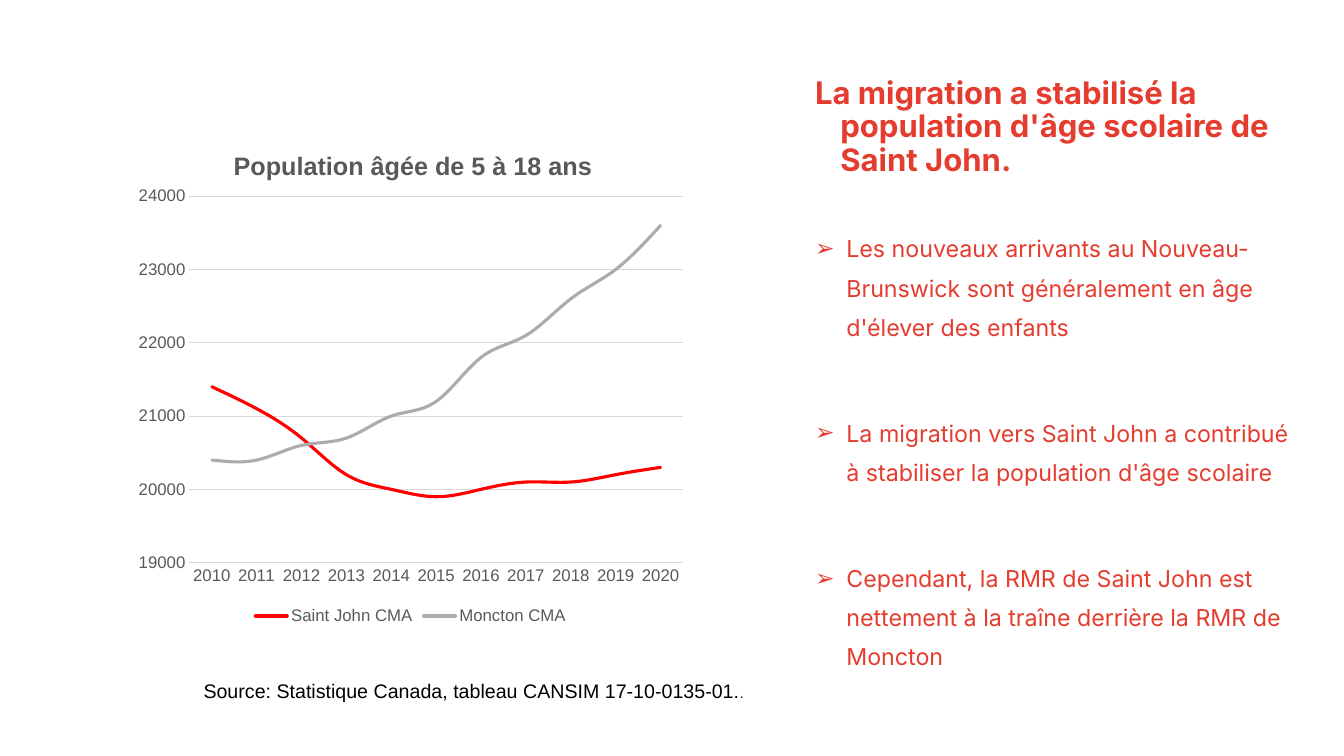
from dataclasses import dataclass

import lxml.etree as etree
import pptx
import pptx.chart.data
import pptx.dml.color
import pptx.enum.chart
import pptx.oxml.ns
import pptx.util

Cm, Pt = pptx.util.Cm, pptx.util.Pt
RGB = pptx.dml.color.RGBColor
qn = pptx.oxml.ns.qn

RED = RGB(0xE4, 0x3D, 0x30)
BLACK = RGB(0, 0, 0)
GREY = RGB(0x59, 0x59, 0x59)
GRID = RGB(0xD9, 0xD9, 0xD9)


@dataclass
class Box:
    """Place on the slide, in centimetres."""
    left: float
    top: float
    width: float
    height: float

    def emu(self) -> list:
        return [Cm(n) for n in (self.left, self.top, self.width, self.height)]


@dataclass
class Style:
    """Look of the paragraphs in one text box."""
    size: float
    face: str
    color: RGB
    bold: bool = False
    left: float = 0
    hang: float = 0
    line: float = 1.0
    gap: float = 0
    mark: str = ""


@dataclass
class Line:
    name: str
    color: RGB
    vals: list


HEAD = "La migration a stabilisé la population d'âge scolaire de Saint John."
POINTS = [
    "Les nouveaux arrivants au Nouveau-Brunswick sont généralement en âge d'élever des enfants",
    "La migration vers Saint John a contribué à stabiliser la population d'âge scolaire",
    "Cependant, la RMR de Saint John est nettement à la traîne derrière la RMR de Moncton",
]
SOURCE = "Source: Statistique Canada, tableau CANSIM 17-10-0135-01."
YEARS = [str(year) for year in range(2010, 2021)]
LINES = [
    Line("Saint John CMA", RGB(0xFF, 0, 0),
         [21400, 21100, 20700, 20200, 20000, 19900, 20000, 20100, 20100, 20200, 20300]),
    Line("Moncton CMA", RGB(0xAF, 0xAB, 0xAB),
         [20400, 20400, 20600, 20700, 21000, 21200, 21800, 22100, 22600, 23000, 23600]),
]


def paint(font, size: float, face: str, color: RGB, bold: bool = False) -> None:
    font.size, font.name, font.bold = Pt(size), face, bold
    font.color.rgb = color


def indent(para, style: Style) -> None:
    """Set the hanging indent and the bullet, if any."""
    props = para._p.get_or_add_pPr()
    props.set("marL", str(Cm(style.left)))
    props.set("indent", str(Cm(style.hang)))
    if style.mark:
        tint = etree.SubElement(props, qn("a:buClr"))
        etree.SubElement(tint, qn("a:srgbClr"), val=str(style.color))
        etree.SubElement(props, qn("a:buFont"), typeface="Arial")
        etree.SubElement(props, qn("a:buChar"), char=style.mark)


def write(slide, box: Box, texts: list, style: Style):
    """Add a text box with one paragraph per text."""
    frame = slide.shapes.add_textbox(*box.emu()).text_frame
    frame.word_wrap = True
    frame.text = "\n".join(texts)
    for rank, para in enumerate(frame.paragraphs):
        indent(para, style)
        para.line_spacing = style.line
        if rank:
            para.space_before = Pt(style.gap)
        for run in para.runs:
            paint(run.font, style.size, style.face, style.color, style.bold)
    return frame


def place(parent, after, **spots: float) -> None:
    """Put a manual chart layout behind the given child of parent."""
    for old in parent.findall(qn("c:layout")):
        parent.remove(old)
    layout = etree.Element(qn("c:layout"))
    manual = etree.SubElement(layout, qn("c:manualLayout"))
    if "w" in spots:
        etree.SubElement(manual, qn("c:layoutTarget"), val="inner")
    for key in ("x", "y"):
        etree.SubElement(manual, qn(f"c:{key}Mode"), val="edge")
    for key, spot in spots.items():
        etree.SubElement(manual, qn(f"c:{key}"), val=str(spot))
    if after is None:
        parent.insert(0, layout)
    else:
        after.addnext(layout)


def plot(slide, box: Box) -> None:
    data = pptx.chart.data.CategoryChartData(number_format="General")
    data.categories = YEARS
    for line in LINES:
        data.add_series(line.name, line.vals)
    kinds = pptx.enum.chart
    chart = slide.shapes.add_chart(kinds.XL_CHART_TYPE.LINE, *box.emu(), data).chart
    paint(chart.font, 12, "Arial", GREY)

    chart.has_title = True
    title = chart.chart_title
    title.text_frame.text = "Population âgée de 5 à 18 ans"
    paint(title.text_frame.paragraphs[0].runs[0].font, 18, "Arial", GREY, True)
    root = title._element
    place(root, root.find(qn("c:tx")), x=0.18, y=0.05)
    place(chart._chartSpace.chart.plotArea, None, x=0.11, y=0.15, w=0.87, h=0.72)

    chart.has_legend = True
    chart.legend.position = kinds.XL_LEGEND_POSITION.BOTTOM
    chart.legend.include_in_layout = False
    paint(chart.legend.font, 12, "Arial", GREY)

    cats, vals = chart.category_axis, chart.value_axis
    for axis in (cats, vals):
        axis.major_tick_mark = axis.minor_tick_mark = kinds.XL_TICK_MARK.NONE
        paint(axis.tick_labels.font, 12, "Arial", GREY)
    vals.minimum_scale, vals.maximum_scale, vals.major_unit = 19000, 24000, 1000
    vals.format.line.fill.background()
    for rule in (cats.format.line, vals.major_gridlines.format.line):
        rule.color.rgb, rule.width = GRID, Pt(0.75)

    for series, line in zip(chart.plots[0].series, LINES):
        series.smooth = True
        series.marker.style = kinds.XL_MARKER_STYLE.NONE
        series.format.line.color.rgb = line.color
        series.format.line.width = Pt(2.25)
        series.format.line._get_or_add_ln().set("cap", "rnd")


def main() -> None:
    deck = pptx.Presentation()
    deck.slide_width, deck.slide_height = Cm(33.87), Cm(19.05)
    slide = deck.slides.add_slide(deck.slide_layouts[6])
    write(slide, Box(19.66, 1.83, 12.93, 3.12), [HEAD],
          Style(22.2, "Inter", RED, bold=True, left=1.27, hang=-0.64, line=0.9))
    write(slide, Box(19.66, 5.51, 13.39, 12.14), POINTS,
          Style(16.6, "Inter", RED, left=1.42, hang=-0.79, line=1.4, gap=48, mark="➢"))
    note = write(slide, Box(4.88, 16.99, 23.77, 0.86), [SOURCE], Style(14, "Arial", BLACK))
    dot = note.paragraphs[0].add_run()
    dot.text = "."
    paint(dot.font, 10, "Arial", BLACK)
    plot(slide, Box(3.2, 3.02, 14.3, 12.83))
    deck.save("out.pptx")


if __name__ == "__main__":
    main()
